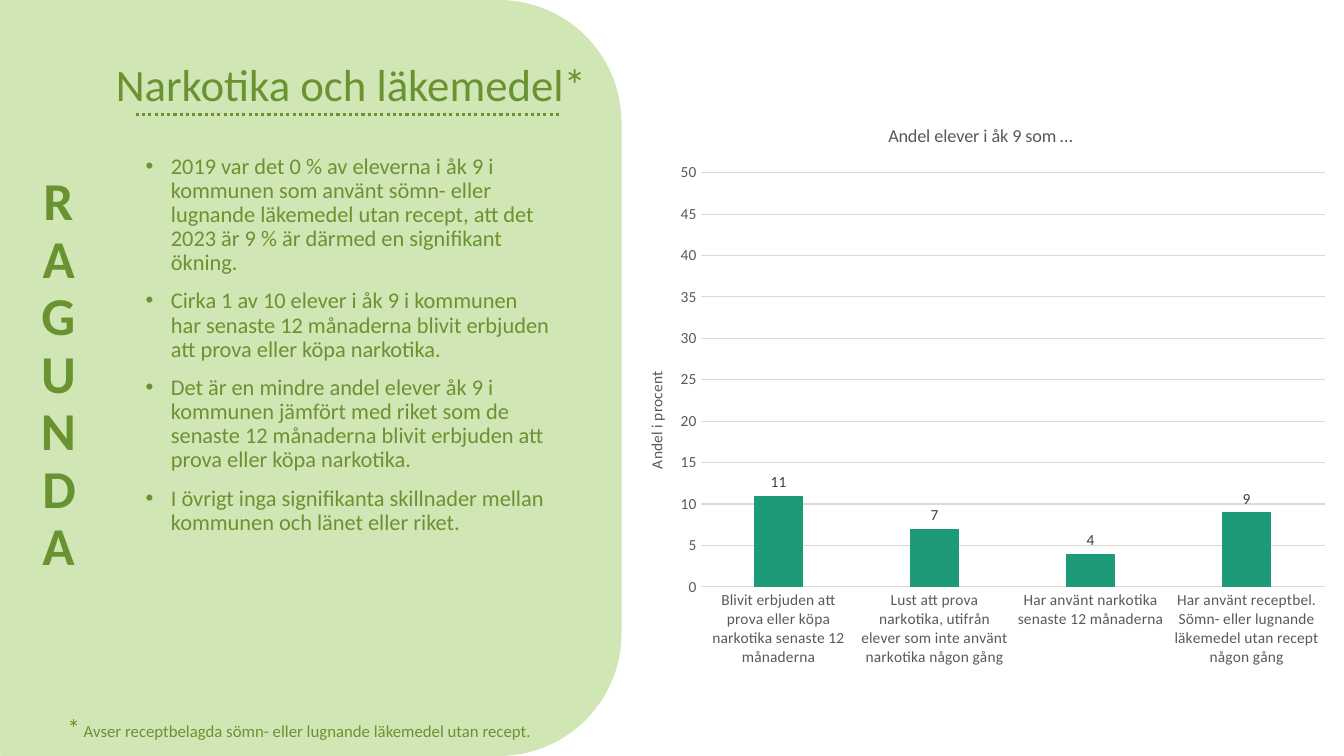
from collections import namedtuple

from lxml import etree
from pptx import Presentation
from pptx.chart.data import CategoryChartData
from pptx.dml.color import RGBColor
from pptx.enum import chart as chart_enum, dml, shapes, text
from pptx.oxml import parse_xml
from pptx.oxml.ns import nsdecls, qn
from pptx.util import Pt

PALE_GREEN = RGBColor(0xD1, 0xE6, 0xB5)
GREEN = RGBColor(0x69, 0x93, 0x31)
TEAL = RGBColor(0x1D, 0x9A, 0x78)
GREY = RGBColor(0x59, 0x59, 0x59)
DARK_GREY = RGBColor(0x40, 0x40, 0x40)
GRID_GREY = RGBColor(0xD9, 0xD9, 0xD9)

Box = namedtuple("Box", "left top width height")

FINDINGS = [
    "2019 var det 0 % av eleverna i åk 9 i kommunen som använt sömn- eller lugnande "
    "läkemedel utan recept, att det 2023 är 9 % är därmed en signifikant ökning.",
    "Cirka 1 av 10 elever i åk 9 i kommunen har senaste 12 månaderna blivit erbjuden "
    "att prova eller köpa narkotika.",
    "Det är en mindre andel elever åk 9 i kommunen jämfört med riket som de senaste "
    "12 månaderna blivit erbjuden att prova eller köpa narkotika.",
    "I övrigt inga signifikanta skillnader mellan kommunen och länet eller riket.",
]
SHARES = {
    "Blivit erbjuden att prova eller köpa narkotika senaste 12 månaderna": 11,
    "Lust att prova narkotika, utifrån elever som inte använt narkotika någon gång": 7,
    "Har använt narkotika senaste 12 månaderna": 4,
    "Har använt receptbel. Sömn- eller lugnande läkemedel utan recept någon gång": 9,
}


def set_attributes(target, **values):
    for name, value in values.items():
        setattr(target, name, value)


def set_font(font, size, color=GREEN, bold=False):
    set_attributes(font, name="Calibri", size=Pt(size), bold=bold)
    font.color.rgb = color


def add_run(paragraph, wording, size, bold=False):
    run = paragraph.add_run()
    run.text = wording
    set_font(run.font, size, bold=bold)


def inside(box, left, top, width, height):
    """Return lengths for a part offset from the corner of the box."""
    return [Pt(value) for value in (box.left + left, box.top + top, width, height)]


def add_filled_shape(slide, preset, position):
    shape = slide.shapes.add_shape(preset, *position)
    shape.shadow.inherit = False
    shape.fill.solid()
    shape.fill.fore_color.rgb = PALE_GREEN
    shape.line.fill.background()
    return shape


def add_heading(slide, box):
    title = slide.shapes.title
    left, top, width, height = inside(box, 0, 0, box.width, box.height)
    set_attributes(title, left=left, top=top, width=width, height=height)
    set_attributes(title.text_frame, vertical_anchor=text.MSO_ANCHOR.MIDDLE,
                   word_wrap=True, auto_size=text.MSO_AUTO_SIZE.NONE)
    paragraph = title.text_frame.paragraphs[0]
    set_attributes(paragraph, alignment=text.PP_ALIGN.CENTER, line_spacing=0.9)
    add_run(paragraph, "Narkotika och läkemedel* ", 32)


def add_underline(slide, box):
    underline = slide.shapes.add_connector(
        shapes.MSO_CONNECTOR.STRAIGHT, Pt(box.left), Pt(box.top),
        Pt(box.left + box.width), Pt(box.top))
    set_attributes(underline.line, width=Pt(2.25), dash_style=dml.MSO_LINE.ROUND_DOT)
    underline.line.color.rgb = GREEN
    etree.SubElement(underline.element.spPr, qn("a:effectLst"))


def add_findings(slide, box):
    shape = add_filled_shape(slide, shapes.MSO_SHAPE.RECTANGLE,
                             inside(box, 0, 0, box.width, box.height))
    frame = shape.text_frame
    set_attributes(frame, word_wrap=True, vertical_anchor=text.MSO_ANCHOR.TOP)
    for index, finding in enumerate(FINDINGS):
        paragraph = frame.add_paragraph() if index else frame.paragraphs[0]
        set_attributes(paragraph, alignment=text.PP_ALIGN.LEFT, line_spacing=0.9,
                       space_before=Pt(10))
        add_run(paragraph, finding, 16)
        properties = paragraph._p.get_or_add_pPr()
        properties.set("marL", str(Pt(18)))
        properties.set("indent", str(-Pt(18)))
        etree.SubElement(properties, qn("a:buFont"), typeface="Arial")
        etree.SubElement(properties, qn("a:buChar"), char="•")


def add_text_box(slide, box):
    frame = slide.shapes.add_textbox(*inside(box, 0, 0, box.width, box.height)).text_frame
    frame.word_wrap = True
    return frame


def add_municipality(slide, box):
    """Write the name of the municipality as stacked upright letters."""
    frame = add_text_box(slide, box)
    frame.vertical_anchor = text.MSO_ANCHOR.BOTTOM
    frame._txBody.bodyPr.set("vert", "wordArtVert")
    paragraph = frame.paragraphs[0]
    set_attributes(paragraph, alignment=text.PP_ALIGN.CENTER, line_spacing=0.9)
    add_run(paragraph, "RAGUNDA", 38, bold=True)


def add_footnote(slide, box):
    paragraph = add_text_box(slide, box).paragraphs[0]
    add_run(paragraph, "*", 18)
    add_run(paragraph, " Avser receptbelagda sömn- eller lugnande läkemedel utan recept.", 12)


def add_text_panel(slide, box):
    panel = add_filled_shape(slide, shapes.MSO_SHAPE.ROUNDED_RECTANGLE,
                             inside(box, 0, 0, box.width, box.height))
    slide.shapes.title.element.addprevious(panel.element)
    parts = [
        (add_heading, Box(152.5, 10, 368, 104.5)),
        (add_findings, Box(179, 107, 303, 325.5)),
        (add_municipality, Box(86, -16.5, 75.5, 570)),
        (add_underline, Box(179, 82, 303, 0)),
        (add_footnote, Box(123, 505, 675, 29)),
    ]
    for add_part, part in parts:
        add_part(slide, part._replace(left=box.left + part.left, top=box.top + part.top))


def set_layout(parent, before, **fractions):
    """Place a chart part by fractions of the chart, ahead of the first tag in before."""
    for old in parent.findall(qn("c:layout")):
        parent.remove(old)
    modes = '<c:layoutTarget val="inner"/>' if "w" in fractions else ""
    modes += '<c:xMode val="edge"/><c:yMode val="edge"/>'
    sizes = "".join(f'<c:{name} val="{value}"/>' for name, value in fractions.items())
    layout = parse_xml(f'<c:layout {nsdecls("c")}><c:manualLayout>{modes}{sizes}'
                       "</c:manualLayout></c:layout>")
    parent.find(qn(before)).addprevious(layout)


def set_title(owner, wording, size):
    owner.has_title = True
    title = owner.chart_title if hasattr(owner, "chart_title") else owner.axis_title
    title.text_frame.text = wording
    set_font(title.text_frame.paragraphs[0].runs[0].font, size, GREY)
    return title


def format_axes(chart):
    for axis in (chart.category_axis, chart.value_axis):
        set_attributes(axis, major_tick_mark=chart_enum.XL_TICK_MARK.NONE,
                       minor_tick_mark=chart_enum.XL_TICK_MARK.NONE)
        set_font(axis.tick_labels.font, 11, GREY)
    values = chart.value_axis
    set_attributes(values, minimum_scale=0, maximum_scale=50, major_unit=5)
    set_attributes(values.tick_labels, number_format="0", number_format_is_linked=False)
    values.format.line.fill.background()
    for line in (chart.category_axis.format.line, values.major_gridlines.format.line):
        line.width = Pt(0.75)
        line.color.rgb = GRID_GREY
    title = set_title(values, "Andel i procent", 11)
    set_layout(title._element, "c:overlay", x=0.03, y=0.46)


def add_share_chart(slide, box):
    data = CategoryChartData(number_format="0")
    data.categories = list(SHARES)
    data.add_series("Series 1", list(SHARES.values()))
    chart = slide.shapes.add_chart(
        chart_enum.XL_CHART_TYPE.COLUMN_CLUSTERED,
        *inside(box, 0, 0, box.width, box.height), data).chart
    set_font(chart.font, 11, GREY)
    chart.has_legend = False
    set_title(chart, "Andel elever i åk 9 som …", 13)
    format_axes(chart)

    plot = chart.plots[0]
    set_attributes(plot, gap_width=219, overlap=-27, vary_by_categories=False,
                   has_data_labels=True)
    set_attributes(plot.data_labels, show_value=True, number_format="0",
                   number_format_is_linked=False,
                   position=chart_enum.XL_LABEL_POSITION.OUTSIDE_END)
    set_font(plot.data_labels.font, 11, DARK_GREY)
    fill = plot.series[0].format.fill
    fill.solid()
    fill.fore_color.rgb = TEAL
    set_layout(chart._chartSpace.chart.plotArea, "c:barChart", x=0.11, y=0.12, w=0.87, h=0.72)


def main():
    presentation = Presentation()
    set_attributes(presentation, slide_width=Pt(960), slide_height=Pt(540))
    slide = presentation.slides.add_slide(presentation.slide_layouts[5])
    add_text_panel(slide, Box(-82, 0, 526, 540))
    add_share_chart(slide, Box(444, 74, 512.5, 411))
    presentation.save("out.pptx")


if __name__ == "__main__":
    main()
